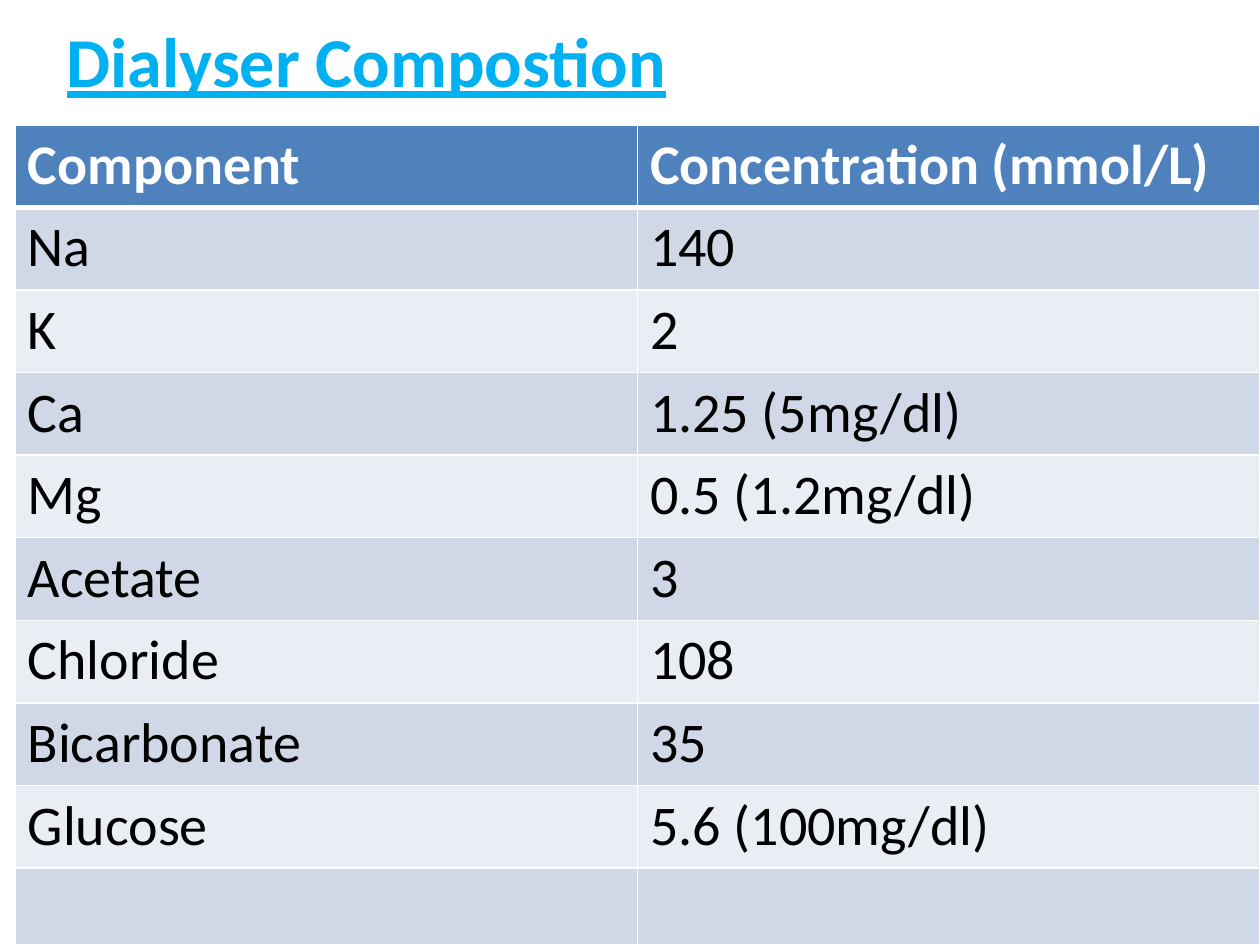
from lxml.etree import SubElement
from pptx import Presentation
from pptx.dml.color import RGBColor
from pptx.enum.text import MSO_AUTO_SIZE
from pptx.oxml.ns import qn
from pptx.util import Inches, Pt

WIDTH, HEIGHT = 10, 7.5
TABLE_LEFT, TABLE_TOP = 0.12, 0.99
LAST_ROW_HEIGHT = 0.61
WHITE, BLACK, SKY = "FFFFFF", "000000", "00B0F0"
HEADER_FILL, BAND_FILLS = "4F81BD", ("E9EDF4", "D0D8E8")
ROWS = [
    ("Component", "Concentration (mmol/L)"),
    ("Na", "140"),
    ("K", "2"),
    ("Ca", "1.25 (5mg/dl)"),
    ("Mg", "0.5 (1.2mg/dl)"),
    ("Acetate", "3"),
    ("Chloride", "108"),
    ("Bicarbonate", "35"),
    ("Glucose", "5.6 (100mg/dl)"),
    ("", ""),
]


def color(hex_text):
    """Turn a hex string into a colour."""
    return RGBColor.from_string(hex_text)


def write_text(frame, text, size=32, ink=BLACK, bold=False, underline=False):
    """Write one formatted span into the first paragraph of a frame."""
    span = frame.paragraphs[0].add_run()
    span.text = text
    font = span.font
    font.name, font.size = "Calibri", Pt(size)
    font.bold, font.underline = bold, underline
    font.color.rgb = color(ink)


def add_title(page, text):
    """Add the underlined heading."""
    box = page.shapes.add_textbox(Inches(0.43), Inches(0.09), Inches(5.02), Inches(0.77))
    frame = box.text_frame
    frame.word_wrap = False
    frame.auto_size = MSO_AUTO_SIZE.SHAPE_TO_FIT_TEXT
    write_text(frame, text, size=40, ink=SKY, bold=True, underline=True)


def set_borders(cell, top=1, bottom=1):
    """Draw white lines around a cell, before its fill is set."""
    properties = cell._tc.get_or_add_tcPr()
    for side, width in (("L", 1), ("R", 1), ("T", top), ("B", bottom)):
        line = SubElement(properties, qn(f"a:ln{side}"), w=str(Pt(width)))
        fill = SubElement(line, qn("a:solidFill"))
        SubElement(fill, qn("a:srgbClr"), val=WHITE)


def fill_cell(cell, text, row):
    """Style and write a cell according to its row."""
    header = row == 0
    set_borders(cell, top=3 if row == 1 else 1, bottom=3 if header else 1)
    cell.fill.solid()
    cell.fill.fore_color.rgb = color(HEADER_FILL if header else BAND_FILLS[row % 2])
    if text:
        write_text(cell.text_frame, text, ink=WHITE if header else BLACK, bold=header)


def add_composition_table(page, rows):
    """Add the table, reaching the right and bottom edges of the slide."""
    width, height = WIDTH - TABLE_LEFT, HEIGHT - TABLE_TOP
    table = page.shapes.add_table(
        len(rows), len(rows[0]),
        Inches(TABLE_LEFT), Inches(TABLE_TOP), Inches(width), Inches(height),
    ).table
    row_height = (height - LAST_ROW_HEIGHT) / (len(rows) - 1)
    for row, texts in enumerate(rows):
        last = row == len(rows) - 1
        table.rows[row].height = Inches(LAST_ROW_HEIGHT if last else row_height)
        for column, text in enumerate(texts):
            fill_cell(table.cell(row, column), text, row)


def main():
    """Build and save the slide."""
    deck = Presentation()
    deck.slide_width, deck.slide_height = Inches(WIDTH), Inches(HEIGHT)
    page = deck.slides.add_slide(deck.slide_layouts[6])
    add_title(page, "Dialyser Compostion")
    add_composition_table(page, ROWS)
    deck.save("out.pptx")


if __name__ == "__main__":
    main()
